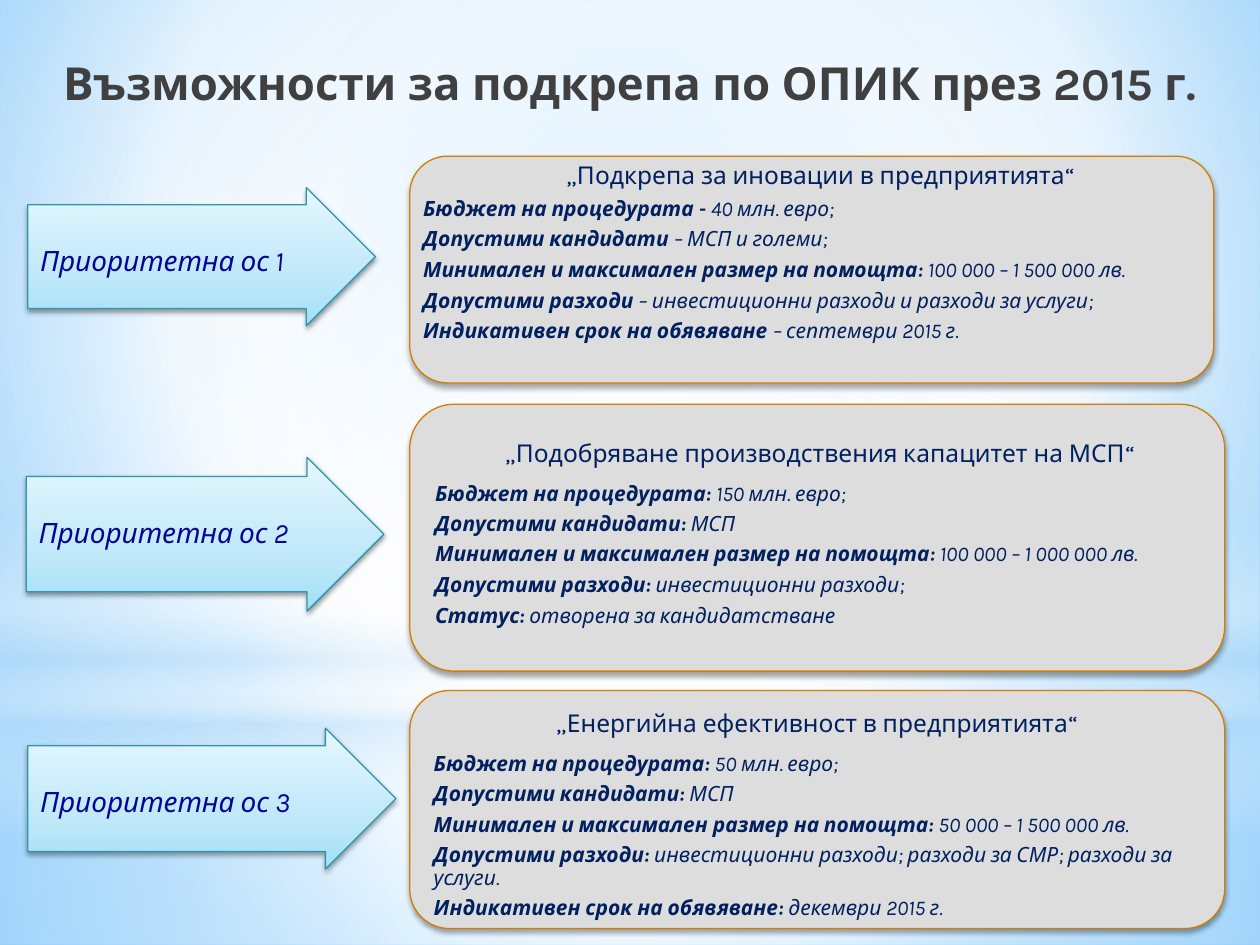
import pptx
import pptx.dml.color
import pptx.enum.shapes
import pptx.enum.text
import pptx.oxml
import pptx.oxml.ns
import pptx.util

Cm = pptx.util.Cm
Pt = pptx.util.Pt
RGBColor = pptx.dml.color.RGBColor
MSO_SHAPE = pptx.enum.shapes.MSO_SHAPE
PP_ALIGN = pptx.enum.text.PP_ALIGN
MSO_ANCHOR = pptx.enum.text.MSO_ANCHOR
qn = pptx.oxml.ns.qn

FONT = "Karla"
WHITE = RGBColor(0xFF, 0xFF, 0xFF)
SKY = RGBColor(0xB4, 0xDC, 0xFA)
BG_LIGHT = RGBColor(0x9E, 0xD5, 0xFF)
BG_DEEP = RGBColor(0x5B, 0xB9, 0xFF)
ARROW_LOW = RGBColor(0xA2, 0xE0, 0xF8)
ARROW_MID = RGBColor(0xBF, 0xE8, 0xF9)
ARROW_HIGH = RGBColor(0xE5, 0xF7, 0xFE)
ARROW_LINE = RGBColor(0x30, 0x96, 0xAD)
ARROW_TEXT = RGBColor(0x05, 0x05, 0x95)
PANEL_FILL = RGBColor(0xDD, 0xDD, 0xDD)
PANEL_LINE = RGBColor(0xD4, 0x7D, 0x00)
NAVY = RGBColor(0x00, 0x20, 0x60)
TITLE_GREY = RGBColor(0x40, 0x40, 0x40)

CENTER = (50, 50, 50, 50)
BUDGET = "Бюджет на процедурата"
APPLICANTS = "Допустими кандидати"
AID = "Минимален и максимален размер на помощта:"
COSTS = "Допустими разходи"
LAUNCH = "Индикативен срок на обявяване"

BACKDROP = [
    (MSO_SHAPE.RECTANGLE, 14.17, 4.88,
     [(0, WHITE, 91), (37, WHITE, 76), (100, SKY, 79)], CENTER, None),
    (MSO_SHAPE.RECTANGLE, 0, 14.17,
     [(0, WHITE, 89), (48, WHITE, 62), (100, SKY, 79)], CENTER, None),
    (MSO_SHAPE.RECTANGLE, 10.46, 6.35,
     [(0, WHITE, 0), (29, WHITE, 30), (45, SKY, 40), (55, WHITE, 26),
      (65, SKY, 60), (100, WHITE, 0)], None, 90),
    (MSO_SHAPE.OVAL, 4.45, 14.17,
     [(0, WHITE, 100), (56, WHITE, 0)], CENTER, None),
]

ARROWS = [
    ("Приоритетна ос 1", (0.56, 3.78, 7.01, 2.79)),
    ("Приоритетна ос 2", (0.53, 9.22, 7.21, 3.1)),
    ("Приоритетна ос 3", (0.56, 14.68, 7.42, 2.84)),
]

INNOVATION = ("„Подкрепа за иновации в предприятията“", [
    (BUDGET + " - ", "40 млн. евро;"),
    (APPLICANTS + " ", "– МСП и големи;"),
    (AID, " 100 000 – 1 500 000 лв."),
    (COSTS + " ", "– инвестиционни разходи и разходи за услуги;"),
    (LAUNCH + " ", "– септември 2015 г."),
])
CAPACITY = (" „Подобряване производствения капацитет на МСП“", [
    (BUDGET + ": ", "150 млн. евро;"),
    (APPLICANTS + ": ", "МСП"),
    (AID, " 100 000 – 1 000 000 лв."),
    (COSTS + ": ", "инвестиционни разходи;"),
    ("Статус: ", "отворена за кандидатстване"),
])
ENERGY = ("„Енергийна ефективност в предприятията“", [
    (BUDGET + ": ", "50 млн. евро;"),
    (APPLICANTS + ": ", "МСП"),
    (AID, " 50 000 – 1 500 000 лв."),
    (COSTS + ": ", "инвестиционни разходи; разходи за СМР; разходи за услуги."),
    (LAUNCH + ": ", "декември 2015 г."),
])


def set_gradient(fill, props, stops, focus=None, angle=0):
    fill.solid()
    gs = "".join(
        f'<a:gs pos="{pos * 1000}"><a:srgbClr val="{color}">'
        f'<a:alpha val="{alpha * 1000}"/></a:srgbClr></a:gs>'
        for pos, color, alpha in stops)
    if focus:
        l, t, r, b = (v * 1000 for v in focus)
        direction = (f'<a:path path="circle"><a:fillToRect l="{l}" t="{t}" '
                     f'r="{r}" b="{b}"/></a:path>')
    else:
        direction = f'<a:lin ang="{angle * 60000}" scaled="0"/>'
    grad = pptx.oxml.parse_xml(
        f'<a:gradFill {pptx.oxml.ns.nsdecls("a")} rotWithShape="1">'
        f'<a:gsLst>{gs}</a:gsLst>{direction}</a:gradFill>')
    props.replace(props.find(qn("a:solidFill")), grad)


def add_shadow(sp, opacity, distance):
    sp.shadow.inherit = False
    effects = sp.element.spPr.find(qn("a:effectLst"))
    effects.append(pptx.oxml.parse_xml(
        f'<a:outerShdw {pptx.oxml.ns.nsdecls("a")} blurRad="{Pt(3.1)}" '
        f'dist="{Pt(distance)}" dir="5400000" rotWithShape="0">'
        f'<a:srgbClr val="000000"><a:alpha val="{opacity * 1000}"/></a:srgbClr>'
        '</a:outerShdw>'))


def add_shape(slide, kind, box, line=None):
    sp = slide.shapes.add_shape(kind, *(Cm(v) for v in box))
    sp.shadow.inherit = False
    if line is None:
        sp.line.fill.background()
    else:
        sp.line.color.rgb = line
        sp.line.width = Pt(0.75)
    return sp


def format_run(r, size, color, bold=False, italic=False):
    r.font.name = FONT
    r.font.size = Pt(size)
    r.font.color.rgb = color
    r.font.bold = bold
    r.font.italic = italic


def add_text_box(slide, box):
    sp = slide.shapes.add_textbox(*(Cm(v) for v in box))
    sp.text_frame.word_wrap = True
    sp.text_frame.vertical_anchor = MSO_ANCHOR.MIDDLE
    return sp.text_frame


def add_title(slide, text):
    p = add_text_box(slide, (0, 0, 25.4, 3.33)).paragraphs[0]
    p.text = text
    p.alignment = PP_ALIGN.CENTER
    format_run(p.runs[0], 26, TITLE_GREY, bold=True)


def add_arrow(slide, text, box):
    sp = add_shape(slide, MSO_SHAPE.RIGHT_ARROW, box, ARROW_LINE)
    sp.adjustments[0] = 0.75
    set_gradient(sp.fill, sp.element.spPr, [
        (0, ARROW_LOW, 100), (35, ARROW_MID, 100), (100, ARROW_HIGH, 100)],
        angle=270)
    add_shadow(sp, 38, 1.6)
    tf = sp.text_frame
    tf.vertical_anchor = MSO_ANCHOR.TOP
    tf.margin_top = Cm(0.79)
    p = tf.paragraphs[0]
    p.text = text
    p.alignment = PP_ALIGN.LEFT
    format_run(p.runs[0], 16, ARROW_TEXT, italic=True)


def add_panel(slide, box):
    sp = add_shape(slide, MSO_SHAPE.ROUNDED_RECTANGLE, box, PANEL_LINE)
    sp.fill.solid()
    sp.fill.fore_color.rgb = PANEL_FILL
    add_shadow(sp, 35, 1.8)
    sp.text_frame.vertical_anchor = MSO_ANCHOR.TOP
    return sp.text_frame


def write_procedure(tf, procedure, heading_spacing, heading_after, first_spacing):
    heading, rows = procedure
    p = tf.paragraphs[0]
    p.text = heading
    p.alignment = PP_ALIGN.CENTER
    p.line_spacing = heading_spacing
    p.space_after = Pt(heading_after)
    format_run(p.runs[0], 14, NAVY)
    for i, (label, value) in enumerate(rows):
        p = tf.add_paragraph()
        p.alignment = PP_ALIGN.LEFT
        p.line_spacing = first_spacing if i == 0 else 0.9
        p.space_after = Pt(4.5)
        for text, bold in ((label, True), (value, False)):
            r = p.add_run()
            r.text = text
            format_run(r, 12, NAVY, bold, italic=True)


def main():
    prs = pptx.Presentation()
    prs.slide_width, prs.slide_height = Cm(25.4), Cm(19.05)
    slide = prs.slides.add_slide(prs.slide_layouts[6])
    fill = slide.background.fill
    fill.solid()
    set_gradient(fill, slide.element.find(".//" + qn("p:bgPr")), [
        (0, BG_LIGHT, 100), (60, WHITE, 100), (100, BG_DEEP, 100)],
        focus=(20, 10, 20, 60))
    for kind, top, height, stops, focus, angle in BACKDROP:
        sp = add_shape(slide, kind, (0, top, 25.4, height))
        set_gradient(sp.fill, sp.element.spPr, stops, focus, angle)

    add_title(slide, "Възможности за подкрепа по ОПИК през 2015 г.")
    for text, box in ARROWS:
        add_arrow(slide, text, box)

    add_panel(slide, (8.26, 3.15, 16.21, 4.57))
    tf = add_text_box(slide, (8.38, 2.72, 16.33, 4.78))
    tf.margin_left = tf.margin_right = Cm(0.15)
    tf.margin_top = tf.margin_bottom = Cm(0.08)
    write_procedure(tf, INNOVATION, 0.9, 4.5, 0.9)
    write_procedure(add_panel(slide, (8.26, 8.15, 16.43, 5.38)), CAPACITY, 1.5, 0, 1.5)
    write_procedure(add_panel(slide, (8.26, 13.92, 16.43, 4.8)), ENERGY, 1.0, 0, 1.5)
    prs.save("out.pptx")


if __name__ == "__main__":
    main()
